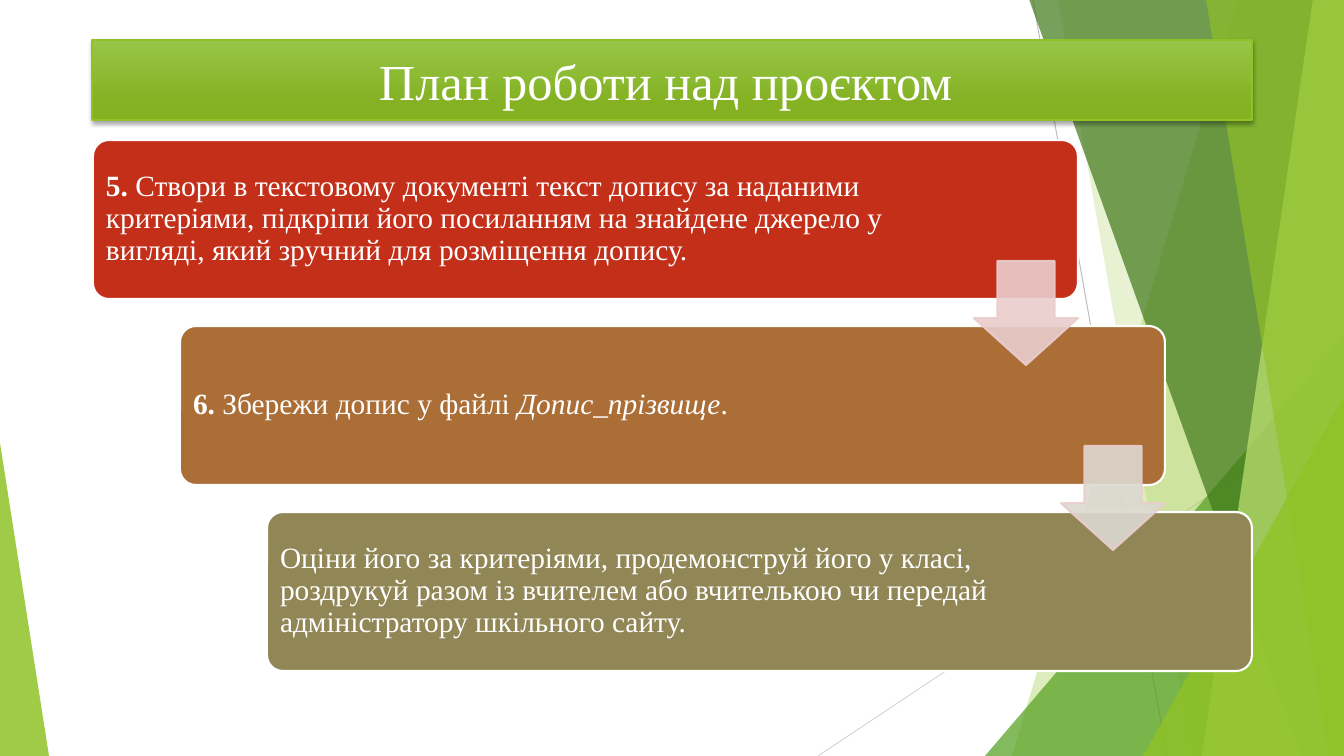
"""Build the project work plan slide: a title bar and three descending steps."""
from lxml import etree
from pptx import Presentation, util as u
from pptx.dml.color import RGBColor
from pptx.enum import shapes as s, text as t
from pptx.oxml import ns

PX = 12192000 / 1344
HUES = {
    "white": "FFFFFF", "lime": "90C226", "green": "54A021", "dark": "3F7819",
    "pale": "C0E474", "top": "97C547", "base": "84B223", "gray": "BFBFBF",
    "light": "D9D9D9", "red": "C42F1A", "brown": "AB6E37", "olive": "918655",
    "pink": "EACDCD", "stone": "DCD9D1",
}

deck = Presentation()
deck.slide_width, deck.slide_height = u.Emu(12192000), u.Emu(6858000)
items = deck.slides.add_slide(deck.slide_layouts[6]).shapes


def paint(shape, hue, alpha=100, edge=None, width=1.5, fade=100):
    """Set the fill and outline, with opacity in percent."""
    shape.shadow.inherit = False
    parts = [(shape.fill, hue, alpha)]
    if edge:
        shape.line.width = u.Pt(width)
        parts.append((shape.line.fill, edge, fade))
    else:
        shape.line.fill.background()
    for fill, name, level in parts:
        fill.solid()
        fill.fore_color.rgb = RGBColor.from_string(HUES[name])
        if level < 100:
            for node in fill._xPr.iter(ns.qn("a:srgbClr")):
                if node.getparent().getparent() is fill._xPr:
                    etree.SubElement(node, ns.qn("a:alpha"), val=str(level * 1000))


def write(shape, runs, size, align=t.PP_ALIGN.LEFT, inset=9, line=None, after=0):
    """Fill a shape with one paragraph of (text, style) runs."""
    frame = shape.text_frame
    frame.word_wrap = True
    frame.vertical_anchor = t.MSO_ANCHOR.MIDDLE
    frame.margin_left = frame.margin_right = u.Emu(round(inset * PX))
    frame.margin_top = frame.margin_bottom = u.Emu(round(inset * PX))
    para = frame.paragraphs[0]
    para.alignment, para.line_spacing = align, line
    para.space_after = u.Pt(after)
    for words, style in runs:
        run = para.add_run()
        run.text = words
        run.font.name, run.font.size = "Times New Roman", u.Pt(size)
        run.font.bold, run.font.italic = style == "bold", style == "italic"
        run.font.color.rgb = RGBColor.from_string(HUES["white"])


for ends, hue in [((1033, 0, 1167, 756), "gray"), ((1344, 406, 818, 756), "light")]:
    rule = items.add_connector(s.MSO_CONNECTOR.STRAIGHT, *[round(n * PX) for n in ends])
    rule.line.width = u.Pt(0.75)
    rule.line.color.rgb = RGBColor.from_string(HUES[hue])
    etree.SubElement(rule._element.spPr, ns.qn("a:effectLst"))

facets = [
    ("band", (1238, 1012), "lime", 30),
    ("band", (1058, 1192), "lime", 20),
    ("peak", (985, 336, 359, 420, 1), "green", 72),
    ("band", (1029, 1301), "dark", 70),
    ("band", (1313, 1202), "pale", 70),
    ("band", (1206, 1329), "lime", 65),
    ("peak", (1143, 396, 201, 360, 1), "lime", 80),
    ("peak", (0, 443, 49, 313, 0), "lime", 85),
]
for kind, spots, hue, alpha in facets:
    if kind == "band":
        high, low = spots
        pen = items.build_freeform(high, -1, scale=PX)
        pen.add_line_segments([(1344, -1), (1344, 756), (low, 756)], close=True)
        facet = pen.convert_to_shape()
    else:
        *box, tip = spots
        facet = items.add_shape(s.MSO_SHAPE.ISOSCELES_TRIANGLE, *[round(n * PX) for n in box])
        facet.adjustments[0] = tip
    paint(facet, hue, alpha)

title = items.add_shape(s.MSO_SHAPE.RECTANGLE, *[round(n * PX) for n in (92, 40, 1160, 80)])
paint(title, "lime", edge="lime", width=1)
title.fill.gradient()
title.fill.gradient_angle = 270
for stop, hue, place in zip(title.fill.gradient_stops, ("top", "base"), (0, 0.78)):
    stop.color.rgb = RGBColor.from_string(HUES[hue])
    stop.position = place
glow = title._element.spPr.find(ns.qn("a:effectLst"))
cast = etree.SubElement(glow, ns.qn("a:outerShdw"), blurRad="38100", dist="25400",
                        dir="5400000", rotWithShape="0")
tint = etree.SubElement(cast, ns.qn("a:srgbClr"), val="000000")
etree.SubElement(tint, ns.qn("a:alpha"), val="35000")
write(title, [("План роботи над проєктом ", "")], 36, align=t.PP_ALIGN.CENTER, inset=5)

steps = [
    ("red", 813, [
        ("5. ", "bold"),
        ("Створи в текстовому документі текст допису за наданими критеріями, "
         "підкріпи його посиланням на знайдене джерело у вигляді, "
         "який зручний для розміщення допису.", "")]),
    ("brown", 785, [
        ("6. ", "bold"), ("Збережи допис у файлі ", ""),
        ("Допис_прізвище", "italic"), (".", "")]),
    ("olive", 785, [
        ("Оціни його за критеріями, продемонструй його у класі, "
         "роздрукуй разом із вчителем або вчителькою чи передай "
         "адміністратору шкільного сайту.", "")]),
]
for i, (hue, wide, runs) in enumerate(steps):
    x, y = 93 + 87 * i, 140 + 186 * i
    card = items.add_shape(s.MSO_SHAPE.ROUNDED_RECTANGLE,
                           *[round(n * PX) for n in (x, y, 985, 159)])
    card.adjustments[0] = 0.1
    paint(card, hue, edge="white")
    label = items.add_textbox(*[round(n * PX) for n in (x + 4, y + 4, wide, 150)])
    write(label, runs, 21, line=0.9, after=7)

for i, hue in enumerate(("pink", "stone")):
    arrow = items.add_shape(s.MSO_SHAPE.DOWN_ARROW,
                            *[round(n * PX) for n in (974 + 87 * i, 261 + 185 * i, 104, 104)])
    arrow.adjustments[0], arrow.adjustments[1] = 0.55, 0.45
    paint(arrow, hue, 90, edge="pink", fade=90)

deck.save("out.pptx")
